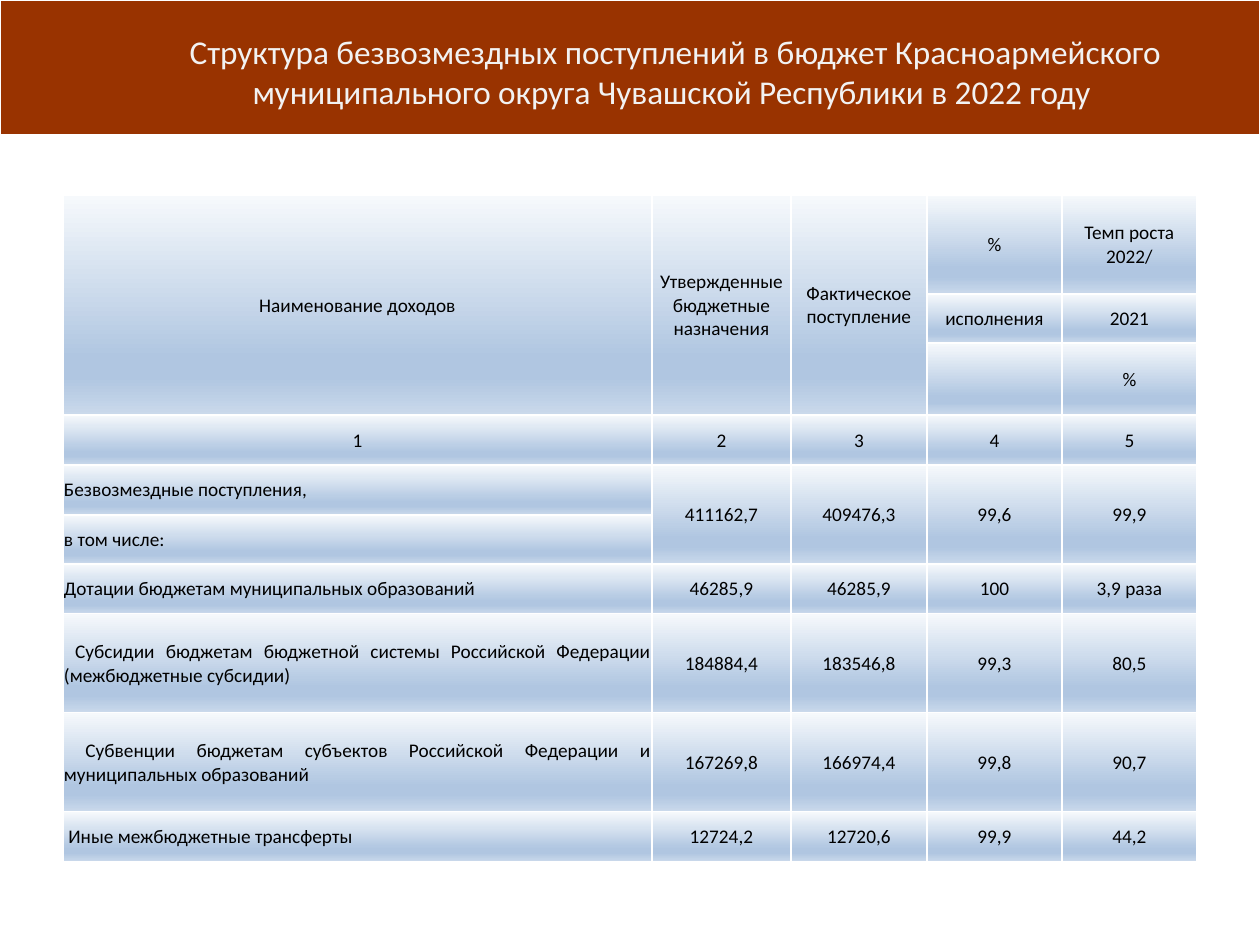
from lxml.etree import SubElement
from pptx import Presentation
from pptx.dml.color import RGBColor
from pptx.enum.shapes import MSO_SHAPE as Shape
from pptx.enum.text import MSO_ANCHOR as Anchor, PP_ALIGN as Align
from pptx.oxml.ns import qn
from pptx.util import Emu, Pt

PX = 914400 / 126
WHITE = RGBColor(0xFF, 0xFF, 0xFF)
TITLE_GRAY = RGBColor(0xF2, 0xF2, 0xF2)
BLACK = RGBColor(0, 0, 0)
BRICK = RGBColor(0x99, 0x33, 0x00)
ICE = RGBColor(0xF6, 0xF9, 0xFC)
STEEL = RGBColor(0xB0, 0xC6, 0xE1)
MIST = RGBColor(0xCA, 0xD9, 0xEB)
CELL_GRADIENT = [(0, ICE), (74, STEEL), (83, STEEL), (100, MIST)]

TITLE = ("Структура безвозмездных поступлений в бюджет Красноармейского "
         "муниципального округа Чувашской Республики в 2022 году ")
COLUMN_WIDTHS = [589, 139, 136, 135, 135]
ROW_HEIGHTS = [99, 49, 72, 50, 50, 49, 50, 99, 99, 50]
FIRST_DATA_ROW = 4
INCOME_ROWS = [
    ["Наименование доходов", "Утвержденные бюджетные назначения",
     "Фактическое поступление", "%", "Темп роста 2022/"],
    ["", "", "", "исполнения", "2021"],
    ["", "", "", "", "%"],
    ["1", "2", "3", "4", "5"],
    ["Безвозмездные поступления,", "411162,7", "409476,3", "99,6", "99,9"],
    ["в том числе:", "", "", "", ""],
    ["Дотации бюджетам муниципальных образований",
     "46285,9", "46285,9", "100", "3,9 раза"],
    [" Субсидии бюджетам бюджетной системы Российской Федерации "
     "(межбюджетные субсидии)", "184884,4", "183546,8", "99,3", "80,5"],
    [" Субвенции бюджетам субъектов Российской Федерации и "
     "муниципальных образований", "167269,8", "166974,4", "99,8", "90,7"],
    [" Иные межбюджетные трансферты", "12724,2", "12720,6", "99,9", "44,2"],
]
MERGES = ([(0, column, 2, column) for column in range(3)]
          + [(4, column, 5, column) for column in range(1, 5)])


def px(length):
    return Emu(round(length * PX))


def assign(target, values):
    for name, value in values.items():
        setattr(target, name, value)


class SlideBuilder:
    font_name = "Calibri"

    def __init__(self, deck):
        self.slide = deck.slides.add_slide(deck.slide_layouts[6])

    def band(self, left, top, width, height, color):
        band = self.slide.shapes.add_shape(
            Shape.RECTANGLE, *map(px, (left, top, width, height)))
        band.shadow.inherit = False
        band.fill.solid()
        band.fill.fore_color.rgb = color
        band.line.color.rgb = WHITE
        band.line.width = Pt(0.75)

    def fill_text(self, frame, text, size, color, align):
        para = frame.paragraphs[0]
        para.alignment = align
        if text:
            span = para.add_run()
            span.text = text
            font = span.font
        else:
            font = para.font
        assign(font, {"name": self.font_name, "size": Pt(size)})
        font.color.rgb = color

    def text(self, left, top, width, height, text, size, color):
        box = self.slide.shapes.add_textbox(*map(px, (left, top, width, height)))
        assign(box.text_frame, {"word_wrap": True, "vertical_anchor": Anchor.MIDDLE})
        self.fill_text(box.text_frame, text, size, color, Align.CENTER)

    def table(self, left, top, widths, heights, rows, merges):
        frame = self.slide.shapes.add_table(
            len(rows), len(widths), px(left), px(top),
            px(sum(widths)), px(sum(heights)))
        table = frame.table
        assign(table, {"first_row": False, "horz_banding": False})
        for column, width in zip(table.columns, widths):
            column.width = px(width)
        for row, height in zip(table.rows, heights):
            row.height = px(height)
        for row_index, row in enumerate(rows):
            for column_index, text in enumerate(row):
                is_name = column_index == 0 and row_index >= FIRST_DATA_ROW
                align = Align.JUSTIFY if is_name else Align.CENTER
                self.cell(table.cell(row_index, column_index), text, align)
        for first_row, first_column, last_row, last_column in merges:
            table.cell(first_row, first_column).merge(
                table.cell(last_row, last_column))

    def cell(self, cell, text, align):
        assign(cell, {"vertical_anchor": Anchor.MIDDLE, "margin_left": px(1),
                      "margin_right": px(1), "margin_top": px(1),
                      "margin_bottom": 0})
        self.fill_text(cell.text_frame, text, 11, BLACK, align)
        properties = cell._tc.get_or_add_tcPr()
        for side in ("lnL", "lnR", "lnT", "lnB"):
            border = SubElement(properties, qn(f"a:{side}"), w=str(Pt(1)))
            paint = SubElement(border, qn("a:solidFill"))
            SubElement(paint, qn("a:srgbClr"), val=str(WHITE))
        gradient = SubElement(properties, qn("a:gradFill"), rotWithShape="1")
        stops = SubElement(gradient, qn("a:gsLst"))
        for percent, color in CELL_GRADIENT:
            stop = SubElement(stops, qn("a:gs"), pos=str(percent * 1000))
            SubElement(stop, qn("a:srgbClr"), val=str(color))
        SubElement(gradient, qn("a:lin"), ang="5400000", scaled="0")


def main():
    deck = Presentation()
    assign(deck, {"slide_width": px(1260), "slide_height": px(945)})
    page = SlideBuilder(deck)
    page.band(0, 0, 1260, 135, BRICK)
    page.text(154, 17, 1043, 108, TITLE, 19, TITLE_GRAY)
    page.table(63, 195, COLUMN_WIDTHS, ROW_HEIGHTS, INCOME_ROWS, MERGES)
    deck.save("out.pptx")


if __name__ == "__main__":
    main()
